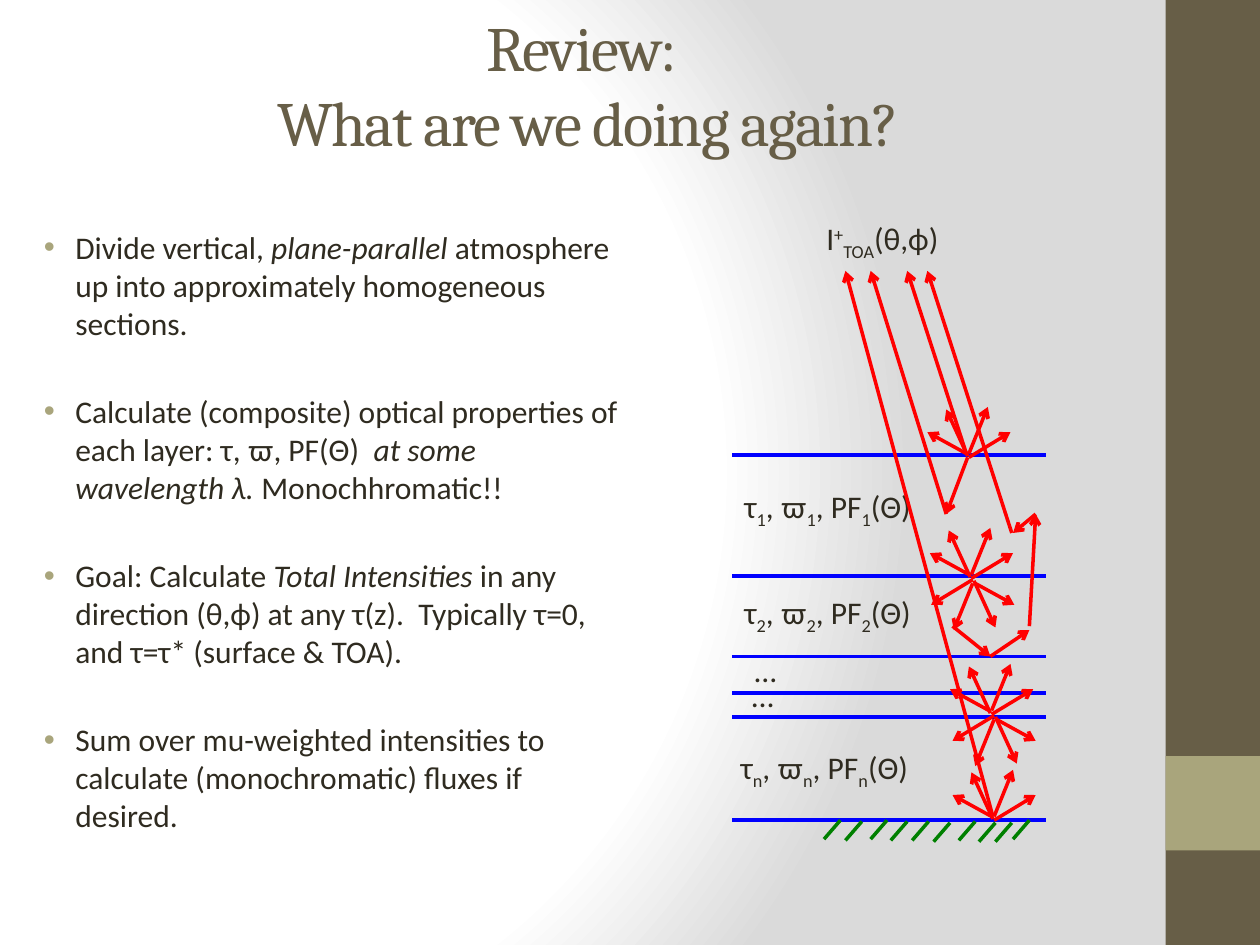
from pptx import Presentation
from pptx.dml.color import RGBColor
from pptx.enum.shapes import MSO_CONNECTOR, MSO_SHAPE
from pptx.enum.text import MSO_ANCHOR, MSO_AUTO_SIZE, PP_ALIGN
from pptx.oxml import parse_xml
from pptx.oxml.ns import nsdecls
from pptx.util import Inches, Pt
from lxml.etree import SubElement

COLORS = {"dark": "675E47", "olive": "A9A57C", "text": "2F2B20",
          "layer": "0000FF", "ground": "008000", "ray": "FF0000",
          "white": "FFFFFF", "grey": "DADADA"}
A = "{http://schemas.openxmlformats.org/drawingml/2006/main}"

prs = Presentation()
prs.slide_width, prs.slide_height = Inches(10), Inches(7.5)
COL, ROW = prs.slide_width / 100, prs.slide_height / 75  # 100 x 75 grid
s = prs.slides.add_slide(prs.slide_layouts[5])


def add_line(x1, y1, x2, y2, color, arrow=False):
    """Draw a 2 pt line between two grid points."""
    ln = s.shapes.add_connector(MSO_CONNECTOR.STRAIGHT, int(x1 * COL), int(y1 * ROW),
                                int(x2 * COL), int(y2 * ROW))
    ln.line.color.rgb = RGBColor.from_string(COLORS[color])
    ln.line.width = Pt(2)
    if arrow:
        SubElement(ln.line._get_or_add_ln(), A + "tailEnd", type="arrow")
    SubElement(ln._element.spPr, A + "effectLst")


def add_runs(p, runs, size=18, font="Calibri", color="text"):
    """Add (text, style) runs; style is "", "italic" or a baseline shift in percent."""
    for text, style in runs:
        r = p.add_run()
        r.text = text
        r.font.size, r.font.name = Pt(size), font
        r.font.color.rgb = RGBColor.from_string(COLORS[color])
        if style == "italic":
            r.font.italic = True
        elif style:
            r._r.get_or_add_rPr().set("baseline", str(style * 1000))


# Background: white glow from the left fading to grey
stops = "".join(f'<a:gs pos="{pos}000"><a:srgbClr val="{COLORS[c]}"/></a:gs>'
                for pos, c in ((0, "white"), (75, "white"), (100, "grey")))
s._element.cSld.insert(0, parse_xml(
    f'<p:bg {nsdecls("p", "a")}><p:bgPr><a:gradFill rotWithShape="1">'
    f'<a:gsLst>{stops}</a:gsLst><a:path path="circle">'
    '<a:fillToRect l="20000" t="50000" r="100000" b="50000"/></a:path>'
    '</a:gradFill><a:effectLst/></p:bgPr></p:bg>'))

# Side band
for top, height, color in ((0, 75, "dark"), (60, 7.5, "olive")):
    sp = s.shapes.add_shape(MSO_SHAPE.RECTANGLE, int(92.5 * COL), int(top * ROW),
                            int(7.5 * COL), int(height * ROW))
    sp.shadow.inherit = False
    sp.fill.solid()
    sp.fill.fore_color.rgb = RGBColor.from_string(COLORS[color])
    sp.line.fill.background()

# Title
title = s.shapes.title
title.left, title.top = int(5 * COL), int(0.4 * ROW)
title.width, title.height = int(83.3 * COL), int(12.5 * ROW)
tf = title.text_frame
tf.auto_size, tf.vertical_anchor = MSO_AUTO_SIZE.NONE, MSO_ANCHOR.MIDDLE
p = tf.paragraphs[0]
p.alignment = PP_ALIGN.CENTER
add_runs(p, [("Review: ", "")], 36, "Cambria", "dark")
p.add_line_break()
add_runs(p, [("What are we doing again?", "")], 36, "Cambria", "dark")
for r in p.runs:
    r._r.get_or_add_rPr().set("spc", "-100")

# Layer boundaries and hatched ground
for y in (36.1, 45.7, 52.1, 55, 56.9, 65.1):
    add_line(58.1, y, 83, y, "layer")
for x, y in ((66.7, 65.1), (68.4, 65.2), (70.4, 65.1), (72, 65.2), (73.7, 65.2),
             (75.4, 65.3), (77.4, 65.2), (79, 65.3), (80.3, 65.3), (81.7, 65.1)):
    add_line(x, y, x - 1.3, y + 1.5, "ground")

# Labels: left, top, width, runs
labels = [(58.1 if n != "n" else 57.8, top, 19.1,
           [("τ", ""), (n, -25), (", ϖ", ""), (n, -25), (", PF", ""), (n, -25), ("(Θ)", "")])
          for n, top in (("1", 38.2), ("2", 46.6), ("n", 58.9))]
labels += [(58.9, 51.2, 5.3, [("…", "")]), (58.7, 53.2, 5.3, [("…", "")]),
           (64.6, 16.9, 18.6, [("I", ""), ("+", 30), ("TOA", -25), ("(θ,ϕ)", "")])]
for left, top, width, runs in labels:
    tf = s.shapes.add_textbox(int(left * COL), int(top * ROW),
                              int(width * COL), int(4 * ROW)).text_frame
    tf.word_wrap = True
    add_runs(tf.paragraphs[0], runs)

# Scattering fans: the downward ones are the upward one turned by 180 degrees
fan = ((0, 0, -1.7, -3.7), (-0.1, -0.2, -3.2, -1.9),
       (0.1, -0.2, 1.6, -3.9), (0.1, 0.1, 3.4, -1.9))
for cx, cy, turn in ((78.8, 65, 1), (76.8, 36.2, 1), (77, 45.8, 1),
                     (77.3, 46.1, -1), (78.6, 56.6, 1), (79, 56.9, -1)):
    for x1, y1, x2, y2 in fan:
        add_line(cx + turn * x1, cy + turn * y1, cx + turn * x2, cy + turn * y2, "ray", True)

# Photon paths, point to point
for points in (((76.7, 36), (72, 21.5)),
               ((76.8, 36.3), (75.1, 40.8), (69.1, 21.5)),
               ((75.6, 49.7), (78.6, 52.1), (81.7, 50)),
               ((81.7, 49.7), (82.2, 40.8), (80.4, 42.3)),
               ((80.3, 42.3), (73.6, 21.5)),
               ((78.8, 64.8), (67.1, 21.5))):
    for start, end in zip(points, points[1:]):
        add_line(*start, *end, "ray", True)

# Bullets
bullets = [
    [("Divide vertical, ", ""), ("plane-parallel", "italic"),
     (" atmosphere up into approximately homogeneous sections.", "")],
    [("Calculate (composite) optical properties of each layer: τ, ϖ, PF(Θ)  ", ""),
     ("at some wavelength λ. ", "italic"), ("Monochhromatic!!", "")],
    [("Goal: Calculate ", ""), ("Total Intensities ", "italic"),
     ("in any direction (θ,ϕ) at any τ(z).  Typically τ=0, and τ=τ* (surface & TOA).", "")],
    [("Sum over mu-weighted intensities to calculate (monochromatic) fluxes if desired.", "")],
]
tf = s.shapes.add_textbox(int(1.2 * COL), int(17.6 * ROW),
                          int(49.4 * COL), int(52.5 * ROW)).text_frame
tf.word_wrap = True
for i, runs in enumerate(bullets):
    p = tf.add_paragraph() if i else tf.paragraphs[0]
    p.space_before = Pt(29 if i else 0)
    pPr = p._p.get_or_add_pPr()
    pPr.set("marL", str(Inches(0.38)))
    pPr.set("indent", str(Inches(-0.25)))
    SubElement(SubElement(pPr, A + "buClr"), A + "srgbClr", val=COLORS["olive"])
    SubElement(pPr, A + "buFont", typeface="Arial")
    SubElement(pPr, A + "buChar", char="•")
    add_runs(p, runs)

prs.save("out.pptx")
